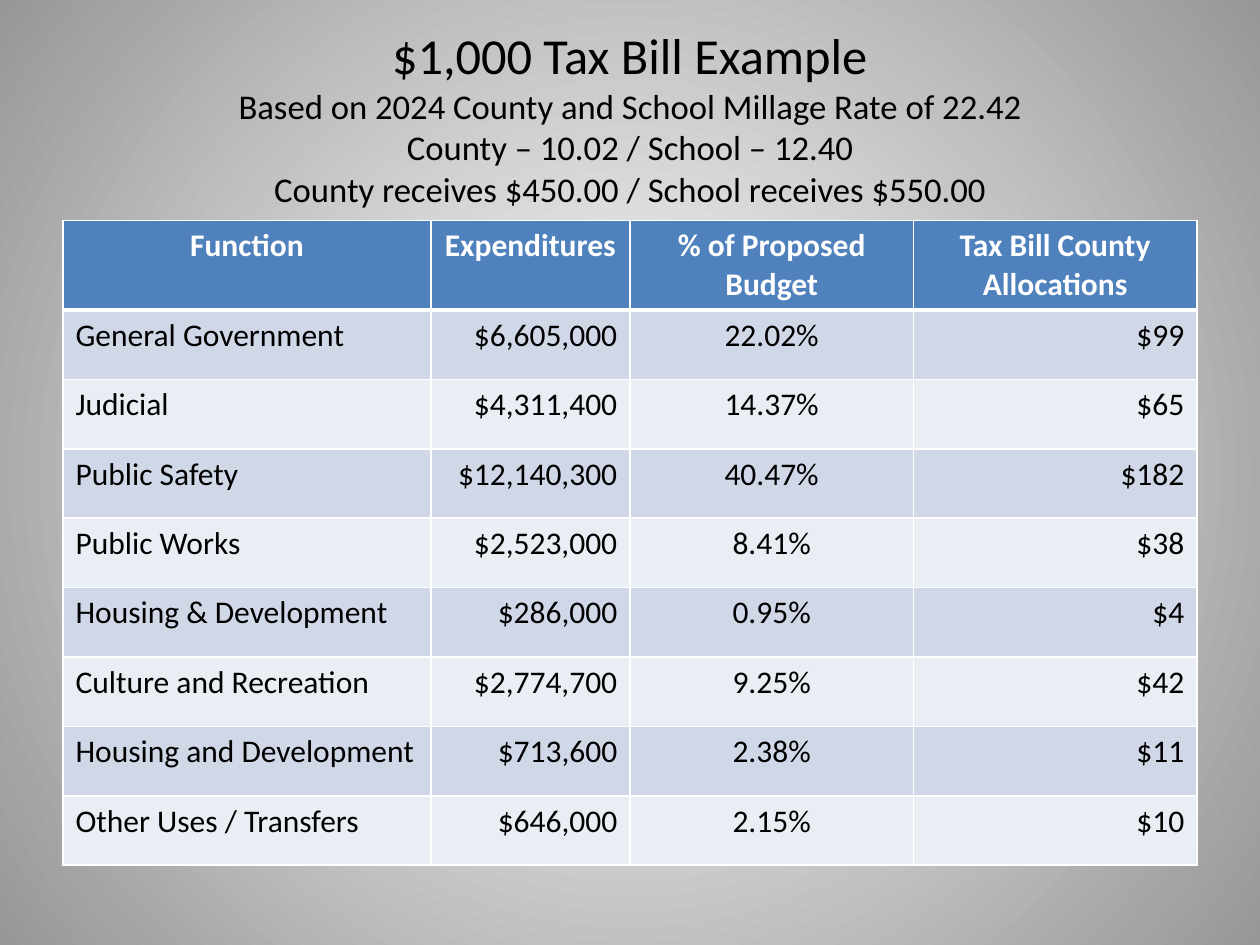
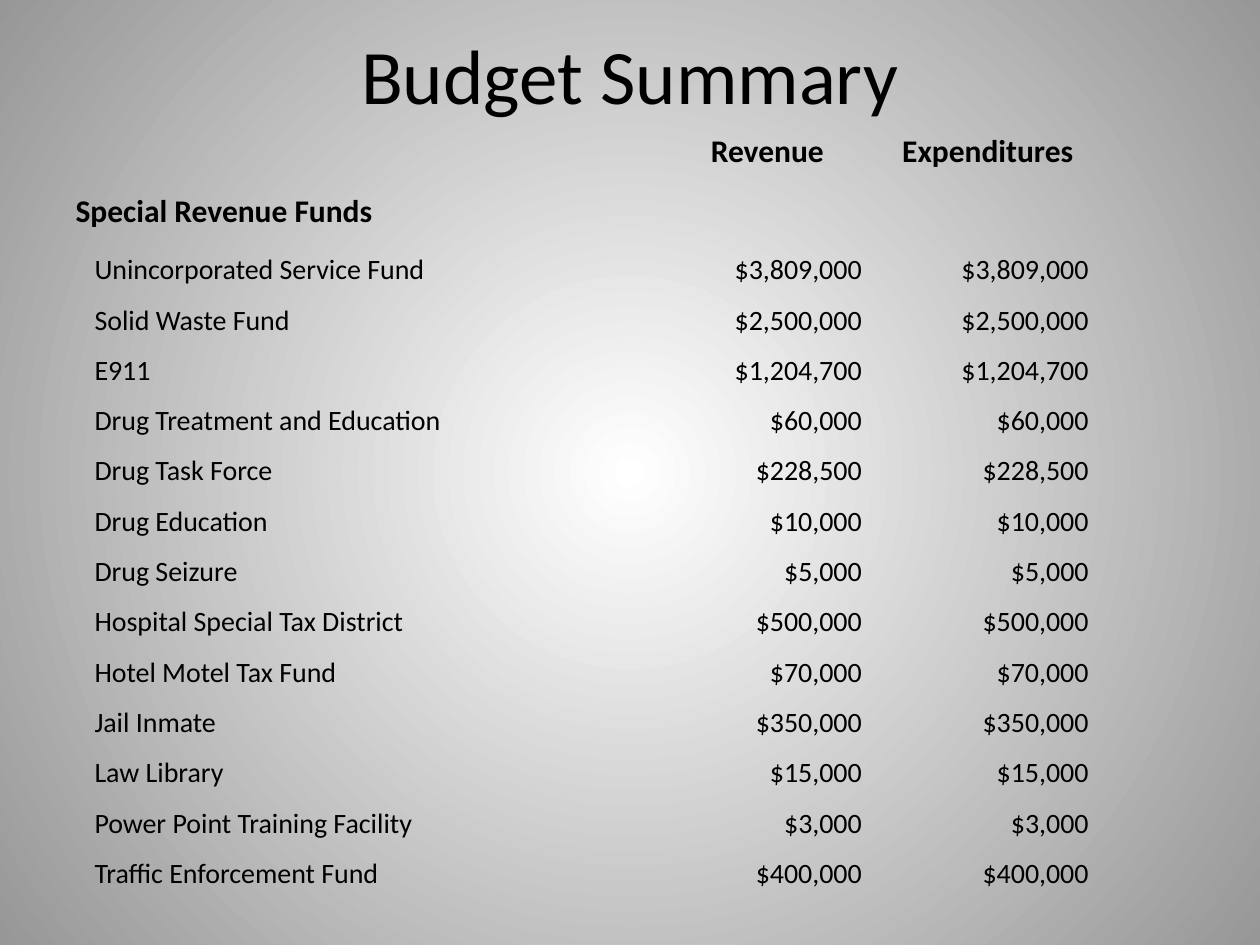
from dataclasses import dataclass

from lxml.etree import SubElement
from pptx import Presentation
from pptx.dml.color import RGBColor
from pptx.enum.text import MSO_ANCHOR, MSO_AUTO_SIZE, PP_ALIGN as AL
from pptx.oxml import parse_xml
from pptx.oxml.ns import nsdecls, qn
from pptx.util import Inches, Pt

UNIT = Inches(0.1)  # the slide is a grid of 100 columns by 75 rows
COLS, ROWS = 100, 75
TITLE_ONLY = 5
NO_STYLE = "{2D5ABB26-0587-4C30-8999-92F81FD0307C}"


@dataclass(frozen=True)
class Theme:
    font: str = "Calibri"
    ink: str = "000000"
    paper: str = "FFFFFF"
    glow_edge: str = "979797"
    header: str = "4F81BD"
    bands: tuple = ("D0D8E8", "E9EDF4")
    title: float = 44
    long_title: float = 28.8
    subtitle: float = 19.8
    table: float = 18
    detail: float = 16
    line: float = 1
    heavy_line: float = 3


@dataclass(frozen=True)
class Box:
    """A region in grid columns and rows."""
    x: float
    y: float
    w: float
    h: float

    def emu(self):
        return [round(v * UNIT) for v in (self.x, self.y, self.w, self.h)]


T = Theme()

TAX_TITLE = [
    ("$1,000 Tax Bill Example", T.long_title),
    ("Based on 2024 County and School Millage Rate of 22.42", T.subtitle),
    ("County – 10.02 / School – 12.40", T.subtitle),
    ("County receives $450.00 / School receives $550.00", T.subtitle),
]
TAX_HEADER = ("Function", "Expenditures", "% of Proposed Budget", "Tax Bill County Allocations")
TAX_ROWS = [
    ("General Government", "$6,605,000", "22.02%", "$99"),
    ("Judicial", "$4,311,400", "14.37%", "$65"),
    ("Public Safety", "$12,140,300", "40.47%", "$182"),
    ("Public Works", "$2,523,000", "8.41%", "$38"),
    ("Housing & Development", "$286,000", "0.95%", "$4"),
    ("Culture and Recreation", "$2,774,700", "9.25%", "$42"),
    ("Housing and Development", "$713,600", "2.38%", "$11"),
    ("Other Uses / Transfers", "$646,000", "2.15%", "$10"),
]
# Each fund's revenue equals its expenditures.
FUNDS = [
    ("Unincorporated Service Fund", "$3,809,000"),
    ("Solid Waste Fund", "$2,500,000"),
    ("E911", "$1,204,700"),
    ("Drug Treatment and Education", "$60,000"),
    ("Drug Task Force", "$228,500"),
    ("Drug Education", "$10,000"),
    ("Drug Seizure", "$5,000"),
    ("Hospital Special Tax District", "$500,000"),
    ("Hotel Motel Tax Fund", "$70,000"),
    ("Jail Inmate", "$350,000"),
    ("Law Library", "$15,000"),
    ("Power Point Training Facility", "$3,000"),
    ("Traffic Enforcement Fund", "$400,000"),
]


def add_run(p, text, size, color=T.ink, bold=False):
    r = p.add_run()
    r.text = text
    r.font.name, r.font.size, r.font.bold = T.font, Pt(size), bold
    r.font.color.rgb = RGBColor.from_string(color)


def set_background(master):
    """Give every slide the radial glow from the centre."""
    stops = "".join(
        f'<a:gs pos="{pos}"><a:srgbClr val="{color}"/></a:gs>'
        for pos, color in ((0, T.paper), (100000, T.glow_edge)))
    glow = parse_xml(
        f'<a:gradFill {nsdecls("a")} rotWithShape="1"><a:gsLst>{stops}</a:gsLst>'
        '<a:path path="circle"><a:fillToRect l="50000" t="50000" r="50000" b="50000"/>'
        '</a:path></a:gradFill>')
    master.background.fill.solid()
    props = next(master.element.iter(qn("p:bgPr")))
    props.replace(props.find(qn("a:solidFill")), glow)


def add_title(s, box, lines):
    title = s.shapes.title
    title.left, title.top, title.width, title.height = box.emu()
    tf = title.text_frame
    tf.auto_size, tf.vertical_anchor = MSO_AUTO_SIZE.NONE, MSO_ANCHOR.MIDDLE
    p = tf.paragraphs[0]
    p.alignment = AL.CENTER
    for i, (text, size) in enumerate(lines):
        if i:
            p.add_line_break()
        add_run(p, text, size)
    for br, (_, size) in zip(title.element.iter(qn("a:br")), lines):
        SubElement(br, qn("a:rPr"), sz=str(round(size * 100)))


def add_plain_table(s, box, col_weights, row_weights):
    """Add an unstyled table whose columns and rows share out the box."""
    frame = s.shapes.add_table(len(row_weights), len(col_weights), *box.emu())
    table = frame.table
    table.first_row = table.horz_banding = False
    next(frame.element.iter(qn("a:tableStyleId"))).text = NO_STYLE
    for col, weight in zip(table.columns, col_weights):
        col.width = round(box.w * UNIT * weight / sum(col_weights))
    for row, weight in zip(table.rows, row_weights):
        row.height = round(box.h * UNIT * weight / sum(row_weights))
    return frame


def fill_cell(cell, text, align, size, color=T.ink, bold=False, fill=None):
    p = cell.text_frame.paragraphs[0]
    p.alignment = align
    add_run(p, text, size, color, bold)
    if fill:
        cell.fill.solid()
        cell.fill.fore_color.rgb = RGBColor.from_string(fill)
    else:
        cell.fill.background()


def rule_cells(frame):
    """Draw white cell borders, heavier under the header row."""
    for i, tr in enumerate(frame.element.iter(qn("a:tr"))):
        widths = {"lnL": T.line, "lnR": T.line,
                  "lnT": T.heavy_line if i == 1 else T.line,
                  "lnB": T.heavy_line if i == 0 else T.line}
        for tc in tr.iter(qn("a:tc")):
            props = tc.get_or_add_tcPr()
            for k, (side, width) in enumerate(widths.items()):
                props.insert(k, parse_xml(
                    f'<a:{side} {nsdecls("a")} w="{Pt(width)}"><a:solidFill>'
                    f'<a:srgbClr val="{T.paper}"/></a:solidFill></a:{side}>'))


def tax_table(s, box):
    frame = add_plain_table(s, box, (2.92, 1.58, 2.25, 2.25), [0.7] + [0.55] * len(TAX_ROWS))
    table = frame.table
    for c, text in enumerate(TAX_HEADER):
        fill_cell(table.cell(0, c), text, AL.CENTER, T.table, T.paper, True, T.header)
    aligns = (AL.LEFT, AL.RIGHT, AL.CENTER, AL.RIGHT)
    for i, values in enumerate(TAX_ROWS):
        for c, (text, align) in enumerate(zip(values, aligns)):
            fill_cell(table.cell(i + 1, c), text, align, T.table, fill=T.bands[i % 2])
    rule_cells(frame)


def funds_table(s, box):
    headings = [("", "", "", "Revenue", "Expenditures"),
                ("Special Revenue Funds", "", "", "", "")]
    details = [(name, "", "", amount, amount) for name, amount in FUNDS]
    table = add_plain_table(s, box, (3.16, 0.25, 1.33, 1.7, 1.8),
                            [0.48] * len(headings) + [0.4] * len(details)).table
    for i, values in enumerate(headings + details):
        heading = i < len(headings)
        size = T.table if heading else T.detail
        for c, text in enumerate(values):
            align = AL.LEFT if c == 0 else AL.CENTER if heading else AL.RIGHT
            fill_cell(table.cell(i, c), text, align, size, bold=heading)
        if not heading:
            table.cell(i, 0).margin_left = Inches(0.25)


def tax_bill_slide(s):
    add_title(s, Box(5, 3, 90, 12.5), TAX_TITLE)
    tax_table(s, Box(5, 17.5, 90, 51.1))


def budget_summary_slide(s):
    add_title(s, Box(5, 1.7, 90, 8.3), [("Budget Summary", T.title)])
    funds_table(s, Box(5, 10, 82.4, 61.5))


def main():
    prs = Presentation()
    prs.slide_width, prs.slide_height = COLS * UNIT, ROWS * UNIT
    set_background(prs.slide_master)
    for build in (tax_bill_slide, budget_summary_slide):
        build(prs.slides.add_slide(prs.slide_layouts[TITLE_ONLY]))
    prs.save("out.pptx")


if __name__ == "__main__":
    main()
